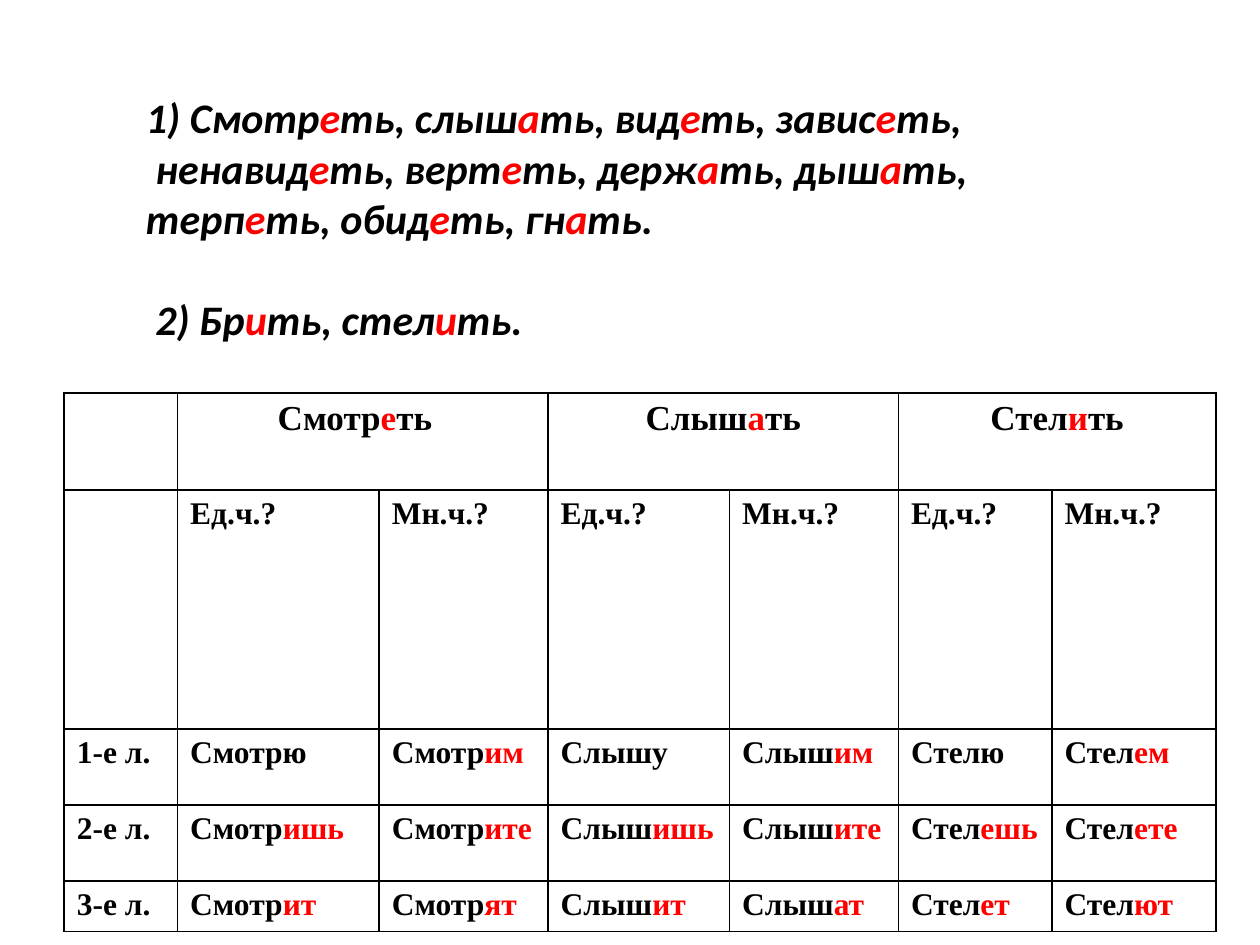
from lxml import etree
from pptx import Presentation
from pptx.dml.color import RGBColor
from pptx.enum import text
from pptx.oxml.ns import qn
from pptx.util import Pt

BLACK = RGBColor(0, 0, 0)
RED = RGBColor(255, 0, 0)
HANGING = 27

# Letters between bars are shown in red.
# Each verb line: text, shift of its first line, space before (points).
VERB_LINES = [
    ("1) Смотр|е|ть, слыш|а|ть, вид|е|ть, завис|е|ть,", 0, 0),
    ("ненавид|е|ть, верт|е|ть, держ|а|ть, дыш|а|ть,", 5.4, 0),
    ("терп|е|ть, обид|е|ть, гн|а|ть.", 0, 0),
    ("2) Бр|и|ть, стел|и|ть.", 5.4, 29),
]
INFINITIVES = ["Смотр|е|ть", "Слыш|а|ть", "Стел|и|ть"]
FORMS = [
    [""] + ["Ед.ч.?", "Мн.ч.?"] * len(INFINITIVES),
    ["1-е л.", "Смотрю", "Смотр|им", "Слышу", "Слыш|им", "Стелю", "Стел|ем"],
    ["2-е л.", "Смотр|ишь", "Смотр|ите", "Слыш|ишь", "Слыш|ите", "Стел|ешь", "Стел|ете"],
    ["3-е л.", "Смотр|ит", "Смотр|ят", "Слыш|ит", "Слыш|ат", "Стел|ет", "Стел|ют"],
]
COLUMN_WIDTHS = [64.8, 115.2, 96.5, 103.7, 96.5, 87.8, 93.6]
ROW_HEIGHTS = [55.4, 136.6, 43.4, 43.4, 28.8]


def write_marked(paragraph, marked, size, font_name, italic=False):
    """Write text whose every second part between bars is red."""
    for index, part in enumerate(marked.split("|")):
        run = paragraph.add_run()
        run.text = part
        run.font.size = Pt(size)
        run.font.name = font_name
        run.font.bold = True
        run.font.italic = italic
        run.font.color.rgb = RED if index % 2 else BLACK


def set_indent(paragraph, left, first_line):
    properties = paragraph._p.get_or_add_pPr()
    properties.set("marL", str(int(Pt(left))))
    properties.set("indent", str(int(Pt(first_line))))


def add_borders(cell):
    properties = cell._tc.get_or_add_tcPr()
    for position, side in enumerate(("lnL", "lnR", "lnT", "lnB")):
        line = etree.Element(qn("a:" + side), w=str(int(Pt(1))))
        fill = etree.SubElement(line, qn("a:solidFill"))
        etree.SubElement(fill, qn("a:srgbClr"), val=str(BLACK))
        properties.insert(position, line)


def add_verb_list(slide):
    box = slide.shapes.add_textbox(Pt(76.3), Pt(49), Pt(601.2), Pt(180))
    frame = box.text_frame
    frame.word_wrap = True
    for index, (line, shift, space) in enumerate(VERB_LINES):
        paragraph = frame.add_paragraph() if index else frame.paragraphs[0]
        set_indent(paragraph, HANGING, shift - HANGING)
        if space:
            paragraph.space_before = Pt(space)
        write_marked(paragraph, line, 24, "Calibri", italic=True)


def add_conjugation_table(slide):
    table = slide.shapes.add_table(
        len(ROW_HEIGHTS), len(COLUMN_WIDTHS), Pt(36.7), Pt(224.6),
        Pt(sum(COLUMN_WIDTHS)), Pt(sum(ROW_HEIGHTS))).table
    table.first_row = table.horz_banding = False
    for column, width in zip(table.columns, COLUMN_WIDTHS):
        column.width = Pt(width)
    for row, height in zip(table.rows, ROW_HEIGHTS):
        row.height = Pt(height)
    for cell in table.iter_cells():
        cell.fill.background()
        add_borders(cell)

    for index, infinitive in enumerate(INFINITIVES):
        column = 1 + 2 * index
        cell = table.cell(0, column)
        cell.merge(table.cell(0, column + 1))
        paragraph = cell.text_frame.paragraphs[0]
        if index:
            paragraph.alignment = text.PP_ALIGN.CENTER
            set_indent(paragraph, HANGING, -HANGING)
        else:
            set_indent(paragraph, 50, 0)
        write_marked(paragraph, infinitive, 20, "Times New Roman")

    for row, forms in enumerate(FORMS, start=1):
        for column, form in enumerate(forms):
            if form:
                paragraph = table.cell(row, column).text_frame.paragraphs[0]
                set_indent(paragraph, HANGING, -HANGING)
                write_marked(paragraph, form, 18, "Times New Roman")


def main():
    presentation = Presentation()
    presentation.slide_width, presentation.slide_height = Pt(720), Pt(540)
    slide = presentation.slides.add_slide(presentation.slide_layouts[6])
    add_verb_list(slide)
    add_conjugation_table(slide)
    presentation.save("out.pptx")


if __name__ == "__main__":
    main()
